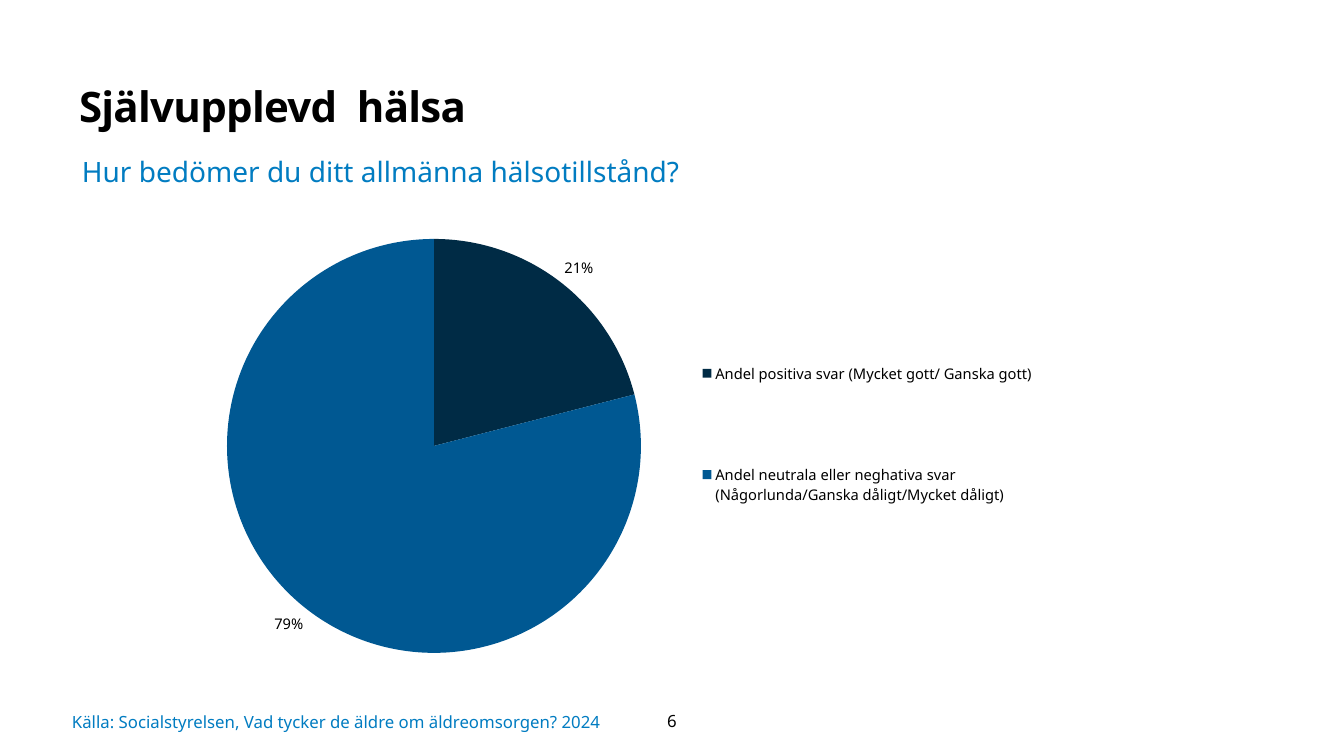
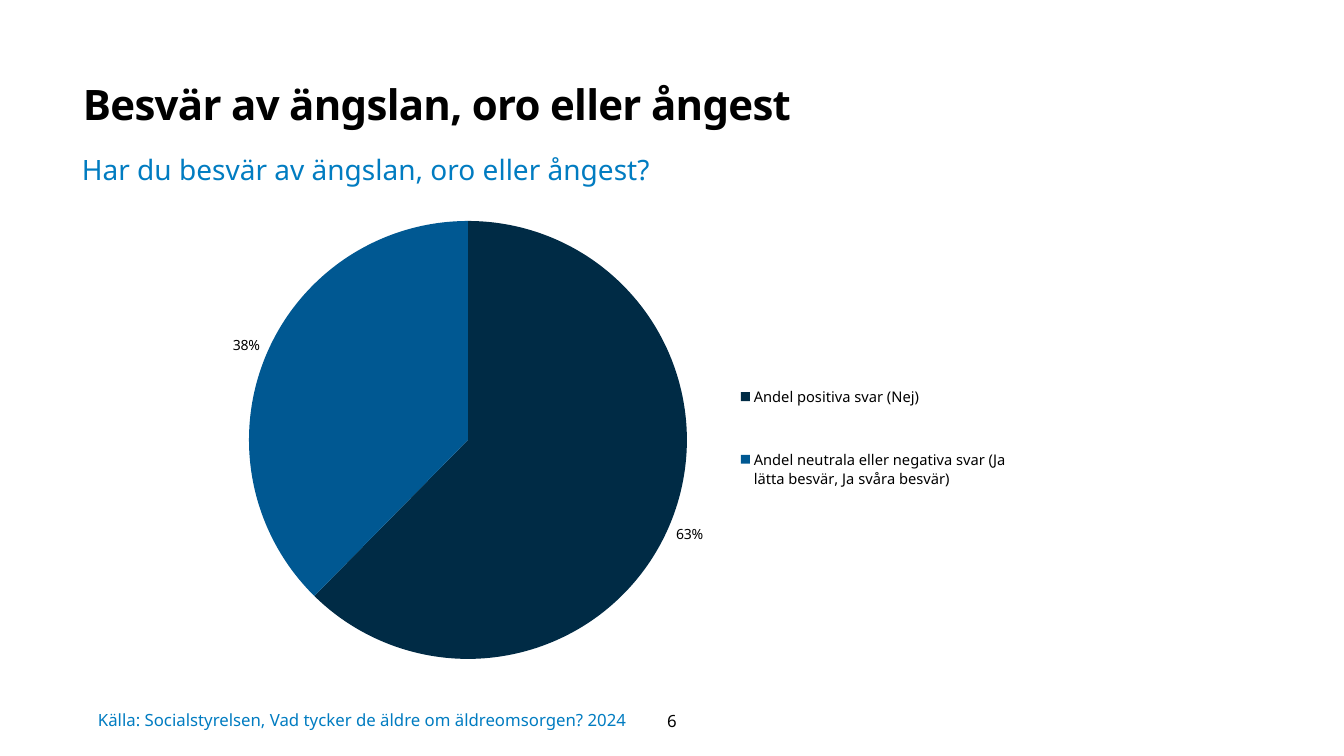
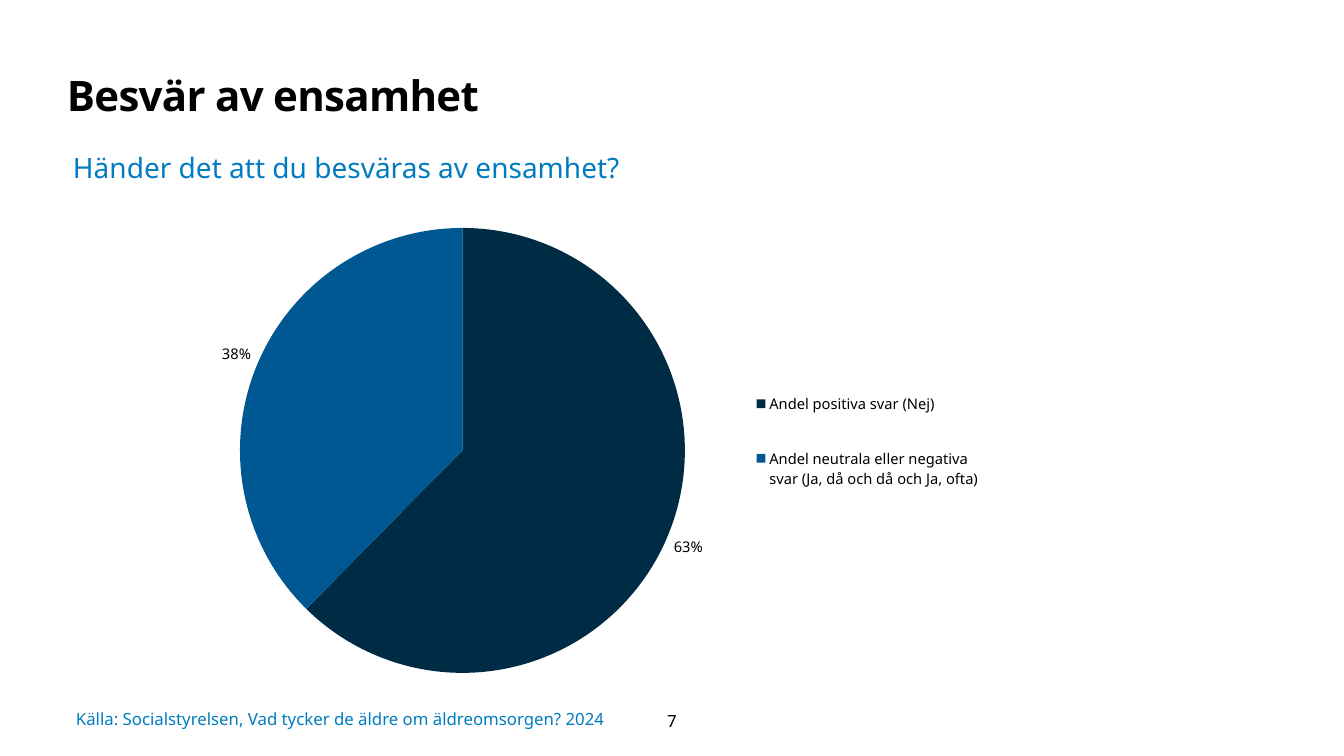
"""Build three slides with survey results shown as pie charts."""
from dataclasses import dataclass

from lxml.etree import SubElement
from pptx import Presentation
from pptx.chart.data import CategoryChartData
from pptx.dml.color import RGBColor
from pptx.enum.chart import XL_CHART_TYPE, XL_LABEL_POSITION, XL_LEGEND_POSITION
from pptx.enum.text import MSO_ANCHOR, MSO_AUTO_SIZE, PP_ALIGN
from pptx.oxml.ns import qn
from pptx.util import Pt


@dataclass(frozen=True)
class Theme:
    font: str = "Noto Sans"
    black: str = "000000"
    accent: str = "017CC1"
    slices: tuple = ("002B45", "005892")
    title: float = 30
    question: float = 20
    footer: float = 12
    chart: float = 10
    legend: float = 10.5


THEME = Theme()
EMU_PER_PX = 914400 / 100.8
SLIDE_SIZE = (1344, 756)
PAGE_BOX = (621, 701, 102, 40)
SOURCE = "Källa: Socialstyrelsen, Vad tycker de äldre om äldreomsorgen? 2024"

SURVEY = [
    {
        "title": "Självupplevd  hälsa", "title_box": (79, 75, 1011, 78),
        "question": "Hur bedömer du ditt allmänna hälsotillstånd?",
        "question_box": (72, 150, 814, 44),
        "answers": {
            "Andel positiva svar (Mycket gott/ Ganska gott)": 21,
            "Andel neutrala eller neghativa svar (Någorlunda/Ganska dåligt/Mycket dåligt)": 79,
        },
        "chart_box": (170, 214, 877, 467), "pie_box": (227, 239, 414, 414),
        "legend_box": (695, 282, 345, 304), "label_size": 10.5,
        "source_box": (72, 701, 549, 42), "page": "6",
    },
    {
        "title": "Besvär av ängslan, oro eller ångest", "title_box": (83, 73, 1007, 65),
        "question": "Har du besvär av ängslan, oro eller ångest?",
        "question_box": (72, 148, 911, 44),
        "answers": {
            "Andel positiva svar (Nej)": 63,
            "Andel neutrala eller negativa svar (Ja lätta besvär, Ja svåra besvär)": 38,
        },
        "chart_box": (131, 172, 993, 528), "pie_box": (249, 221, 438, 438),
        "legend_box": (731, 344, 285, 188), "label_size": 10,
        "source_box": (98, 705, 886, 29), "page": "6",
    },
    {
        "title": "Besvär av ensamhet", "title_box": (67, 64, 1072, 71),
        "question": "Händer det att du besväras av ensamhet?",
        "question_box": (63, 146, 1037, 44),
        "answers": {
            "Andel positiva svar (Nej)": 63,
            "Andel neutrala eller negativa svar (Ja, då och då och Ja, ofta)": 38,
        },
        "chart_box": (165, 198, 829, 503), "pie_box": (240, 228, 445, 445),
        "legend_box": (748, 359, 239, 164), "label_size": 10.5,
        "source_box": (76, 704, 596, 29), "page": "7",
    },
]


def emu(lengths):
    return [round(length * EMU_PER_PX) for length in lengths]


def style(font, size, color=THEME.black, bold=False):
    font.name, font.size, font.bold = THEME.font, Pt(size), bold
    font.color.rgb = RGBColor.from_string(color)


def write(frame, text, size, color=THEME.black, bold=False, align=PP_ALIGN.LEFT,
          anchor=MSO_ANCHOR.TOP):
    frame.word_wrap = True
    frame.auto_size = MSO_AUTO_SIZE.NONE
    frame.vertical_anchor = anchor
    paragraph = frame.paragraphs[0]
    paragraph.alignment = align
    run = paragraph.add_run()
    run.text = text
    style(run.font, size, color, bold)
    return run


def set_margins(frame, *margins):
    frame.margin_left, frame.margin_top, frame.margin_right, frame.margin_bottom = emu(margins)


def add_title(slide, text, box):
    title = slide.shapes.title
    title.left, title.top, title.width, title.height = emu(box)
    set_margins(title.text_frame, 0, 0, 10, 5)
    run = write(title.text_frame, text, THEME.title, bold=True)
    run.font._element.set("spc", "-50")
    title.text_frame.paragraphs[0].line_spacing = 1.1


def add_text(slide, box, *content, **options):
    frame = slide.shapes.add_textbox(*emu(box)).text_frame
    write(frame, *content, **options)
    return frame


def place(part, index, box, chart_box, inner=False):
    for old in part.findall(qn("c:layout")):
        part.remove(old)
    layout = SubElement(part, qn("c:layout"))
    part.insert(index, layout)
    manual = SubElement(layout, qn("c:manualLayout"))
    left, top, width, height = chart_box
    settings = [("layoutTarget", "inner")] if inner else []
    settings += [("xMode", "edge"), ("yMode", "edge"),
                 ("x", (box[0] - left) / width), ("y", (box[1] - top) / height),
                 ("w", box[2] / width), ("h", box[3] / height)]
    for tag, value in settings:
        SubElement(manual, qn(f"c:{tag}")).set("val", str(value))


def add_pie(slide, topic):
    answers, box = topic["answers"], topic["chart_box"]
    data = CategoryChartData()
    data.categories = list(answers)
    data.add_series("Series 1", list(answers.values()))
    chart = slide.shapes.add_chart(XL_CHART_TYPE.PIE, *emu(box), data).chart
    style(chart.font, THEME.chart)
    chart.has_title = False

    chart.has_legend = True
    chart.legend.position = XL_LEGEND_POSITION.RIGHT
    chart.legend.include_in_layout = False
    style(chart.legend.font, THEME.legend)

    pie = chart.plots[0]
    pie.vary_by_categories = True
    pie.has_data_labels = True
    labels = pie.data_labels
    labels.show_percentage, labels.show_value = False, True
    labels.number_format, labels.number_format_is_linked = '0"%"', False
    labels.position = XL_LABEL_POSITION.OUTSIDE_END
    style(labels.font, topic["label_size"])
    for index, color in enumerate(THEME.slices):
        answer = pie.series[0].points[index].format
        answer.fill.solid()
        answer.fill.fore_color.rgb = RGBColor.from_string(color)
        answer.line.fill.background()

    place(chart._chartSpace.find(".//" + qn("c:plotArea")), 0, topic["pie_box"], box, inner=True)
    place(chart.legend._element, 1, topic["legend_box"], box)


def add_topic(deck, topic):
    slide = deck.slides.add_slide(deck.slide_layouts[5])
    add_title(slide, topic["title"], topic["title_box"])
    question = add_text(slide, topic["question_box"], topic["question"],
                        THEME.question, THEME.accent)
    question.auto_size = MSO_AUTO_SIZE.SHAPE_TO_FIT_TEXT
    add_pie(slide, topic)
    source = add_text(slide, topic["source_box"], SOURCE, THEME.footer, THEME.accent,
                      anchor=MSO_ANCHOR.MIDDLE)
    set_margins(source, 0, 0, 0, 0)
    add_text(slide, PAGE_BOX, topic["page"], THEME.footer,
             align=PP_ALIGN.CENTER, anchor=MSO_ANCHOR.MIDDLE)


def main():
    deck = Presentation()
    deck.slide_width, deck.slide_height = emu(SLIDE_SIZE)
    for topic in SURVEY:
        add_topic(deck, topic)
    deck.save("out.pptx")


if __name__ == "__main__":
    main()
